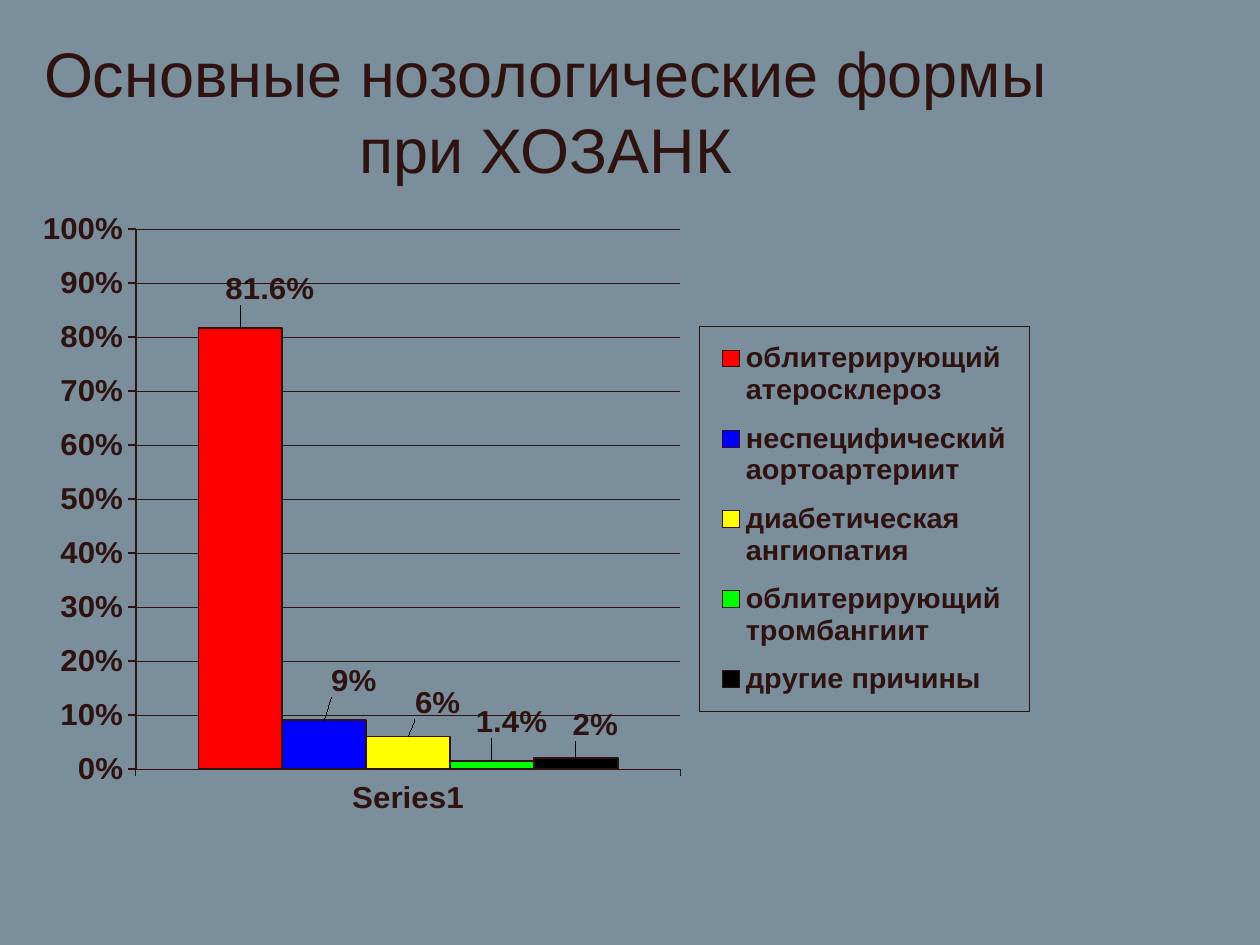
from lxml.etree import fromstring
from pptx import Presentation
from pptx.chart.data import CategoryChartData
from pptx.dml.color import RGBColor
from pptx.enum.chart import (
    XL_CHART_TYPE as ChartType,
    XL_LABEL_POSITION as LabelPosition,
    XL_LEGEND_POSITION as LegendPosition,
    XL_TICK_LABEL_POSITION as TickLabels,
    XL_TICK_MARK as TickMark,
)
from pptx.enum.text import MSO_ANCHOR as Anchor, PP_ALIGN as Align
from pptx.oxml.ns import nsdecls
from pptx.util import Inches, Pt

BACKGROUND = RGBColor(0x7A, 0x8E, 0x9C)
INK = RGBColor(0x2F, 0x13, 0x11)
RED = RGBColor(0xFF, 0x00, 0x00)
BLUE = RGBColor(0x00, 0x00, 0xFF)
YELLOW = RGBColor(0xFF, 0xFF, 0x00)
GREEN = RGBColor(0x00, 0xFF, 0x00)
BLACK = RGBColor(0x00, 0x00, 0x00)

DISEASES = [
    ("облитерирующий атеросклероз", 0.816, RED, "0.0%", (0.03, -0.03)),
    ("неспецифический аортоартериит", 0.09, BLUE, "0%", (0.03, -0.03)),
    ("диабетическая ангиопатия", 0.06, YELLOW, "0%", (0.03, -0.02)),
    ("облитерирующий тромбангиит", 0.014, GREEN, "0.0%", (0.02, -0.03)),
    ("другие причины", 0.02, BLACK, "0%", (0.02, -0.02)),
]


def layout_xml(values, inner=False, edge=True):
    parts = '<c:layoutTarget val="inner"/>' if inner else ""
    if edge:
        parts += '<c:xMode val="edge"/><c:yMode val="edge"/>'
    parts += "".join(
        f'<c:{key} val="{value}"/>' for key, value in zip("xywh", values)
    )
    return fromstring(
        f'<c:layout {nsdecls("c")}><c:manualLayout>{parts}'
        "</c:manualLayout></c:layout>"
    )


class DiseaseSlide:
    font_name = "Arial"
    chart_size = Pt(17.9)
    legend_size = Pt(16.5)

    def __init__(self, deck):
        self.slide = deck.slides.add_slide(deck.slide_layouts[5])
        fill = self.slide.background.fill
        fill.solid()
        fill.fore_color.rgb = BACKGROUND

    def style_font(self, font, size, bold):
        font.name = self.font_name
        font.size = size
        font.bold = bold
        font.color.rgb = INK

    def style_line(self, line, width):
        line.color.rgb = INK
        line.width = Pt(width)

    def title(self, text, left, top, width, height):
        heading = self.slide.shapes.title
        heading.left, heading.top = left, top
        heading.width, heading.height = width, height
        frame = heading.text_frame
        frame.text = text
        frame.word_wrap = True
        frame.vertical_anchor = Anchor.MIDDLE
        paragraph = frame.paragraphs[0]
        paragraph.alignment = Align.CENTER
        self.style_font(paragraph.runs[0].font, Pt(36), False)

    def column_chart(self, diseases, left, top, width, height):
        shares = CategoryChartData(number_format="0%")
        shares.categories = ["Series1"]
        for name, share, *_ in diseases:
            shares.add_series(name, [share])
        chart = self.slide.shapes.add_chart(
            ChartType.COLUMN_CLUSTERED, left, top, width, height, shares
        ).chart
        chart.has_title = False
        self.style_font(chart.font, self.chart_size, True)
        self.axes(chart)
        self.columns(chart, diseases)
        self.legend(chart)
        plot_area = chart.element.xpath(".//c:plotArea")[0]
        for automatic in plot_area.xpath("./c:layout"):
            plot_area.remove(automatic)
        plot_area.insert(0, layout_xml((0.092, 0.009, 0.552, 0.924), inner=True))

    def axes(self, chart):
        for axis, width in ((chart.category_axis, 0.25), (chart.value_axis, 1)):
            axis.major_tick_mark = TickMark.OUTSIDE
            axis.minor_tick_mark = TickMark.NONE
            self.style_line(axis.format.line, width)
            self.style_font(axis.tick_labels.font, self.chart_size, True)
        chart.category_axis.tick_label_position = TickLabels.LOW
        scale = chart.value_axis
        scale.minimum_scale, scale.maximum_scale = 0, 1
        scale.major_unit = 0.1
        scale.tick_labels.number_format = "0%"
        scale.tick_labels.number_format_is_linked = False
        scale.has_major_gridlines = True
        self.style_line(scale.major_gridlines.format.line, 0.25)

    def columns(self, chart, diseases):
        plot = chart.plots[0]
        plot.gap_width = 150
        plot.overlap = 0
        plot.vary_by_categories = False
        for series, (_, _, color, _, _) in zip(plot.series, diseases):
            series.invert_if_negative = False
            series.format.fill.solid()
            series.format.fill.fore_color.rgb = color
            self.style_line(series.format.line, 1)
            label = series.points[0].data_label
            self.style_font(label.font, self.chart_size, True)
            label.position = LabelPosition.OUTSIDE_END
        labels = chart.element.xpath(".//c:dLbl")
        for label, (*_, number_format, offset) in zip(labels, diseases):
            label.insert(1, layout_xml(offset, edge=False))
            label.insert(2, fromstring(
                f'<c:numFmt {nsdecls("c")} formatCode="{number_format}" '
                'sourceLinked="0"/>'
            ))

    def legend(self, chart):
        chart.has_legend = True
        chart.legend.position = LegendPosition.RIGHT
        chart.legend.include_in_layout = False
        self.style_font(chart.legend.font, self.legend_size, True)
        legend = chart.element.xpath(".//c:legend")[0]
        for automatic in legend.xpath("./c:layout"):
            legend.remove(automatic)
        legend.xpath("./c:legendPos")[0].addnext(
            layout_xml((0.663, 0.175, 0.334, 0.66))
        )
        legend.xpath("./c:overlay")[0].addnext(fromstring(
            f'<c:spPr {nsdecls("c", "a")}><a:noFill/><a:ln w="{Pt(0.25)}">'
            f'<a:solidFill><a:srgbClr val="{INK}"/></a:solidFill></a:ln></c:spPr>'
        ))


def main():
    deck = Presentation()
    deck.slide_width, deck.slide_height = Inches(10), Inches(7.5)
    page = DiseaseSlide(deck)
    page.title(
        "Основные нозологические формы при ХОЗАНК",
        Inches(0.24), Inches(0.25), Inches(8.18), Inches(1.25),
    )
    page.column_chart(
        DISEASES, Inches(0.34), Inches(1.68), Inches(7.85), Inches(4.79)
    )
    deck.save("out.pptx")


if __name__ == "__main__":
    main()
